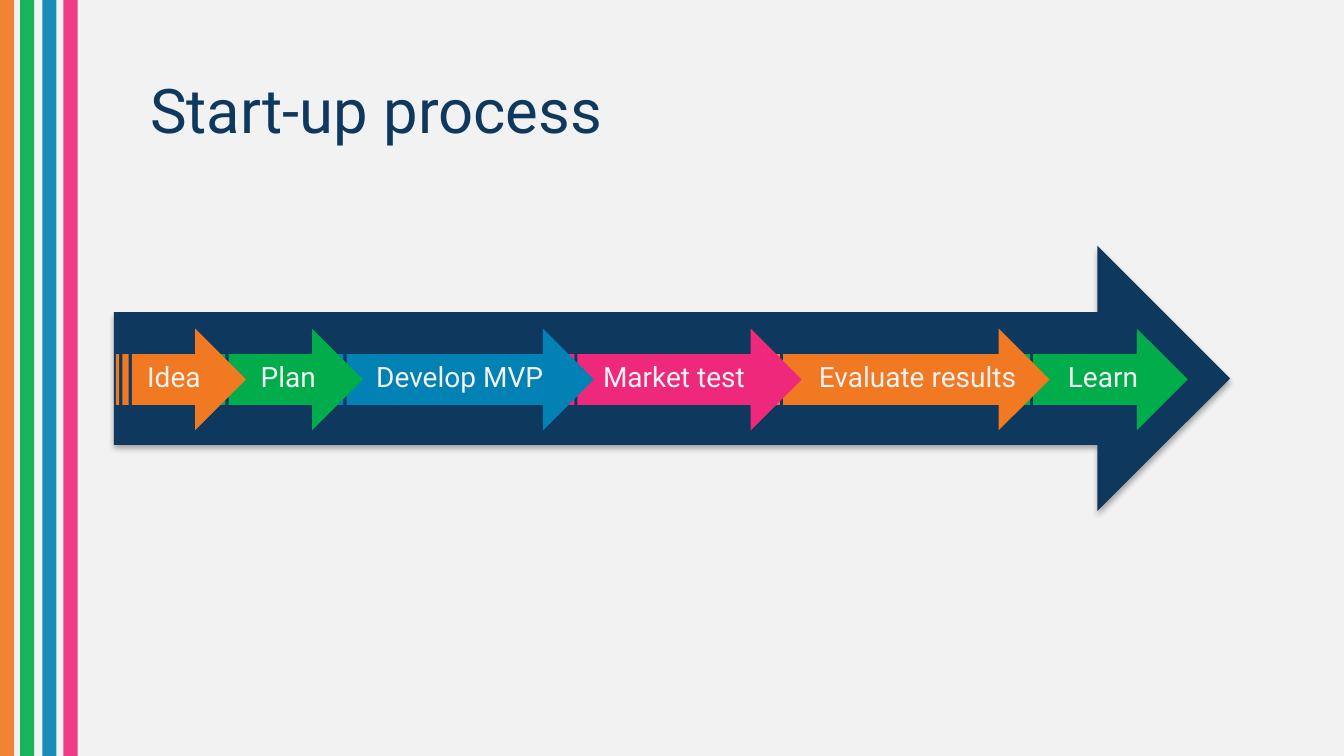
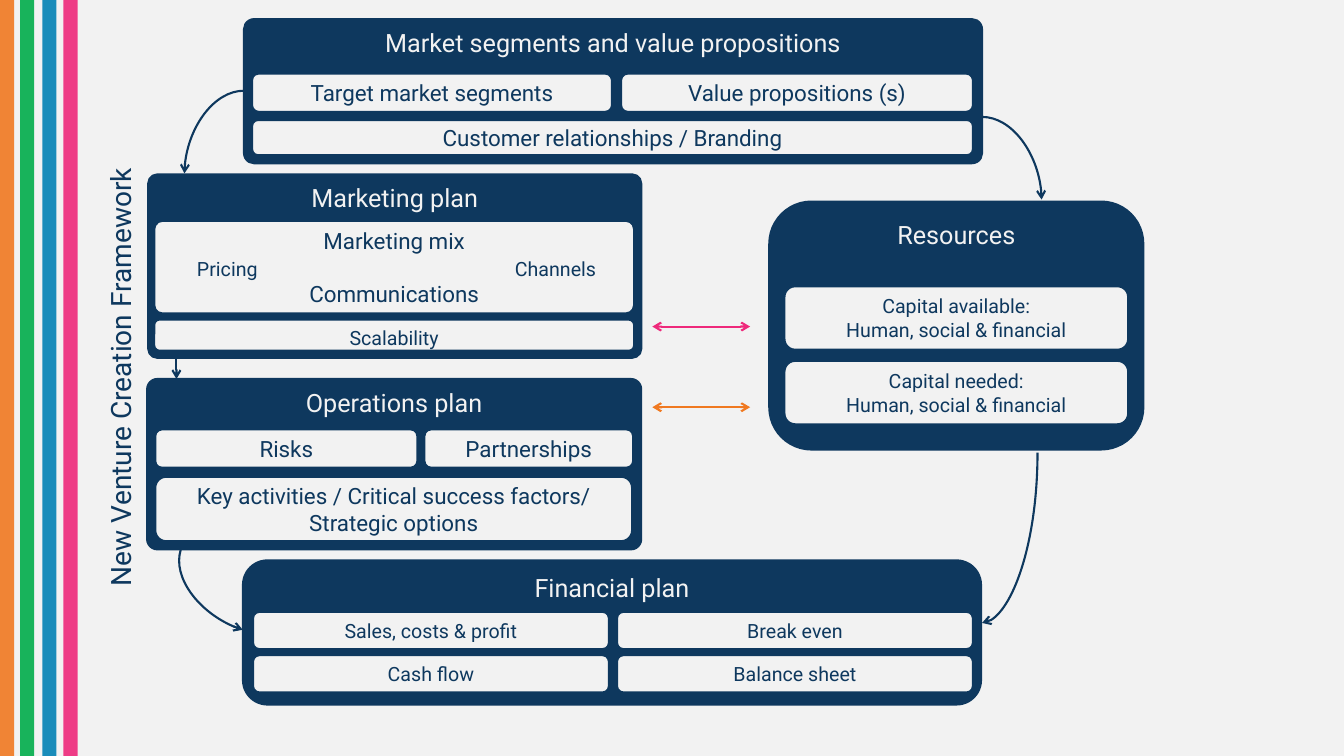
"""Builds two slides on starting a company: the process and the framework."""

import pptx
import pptx.dml.color
import pptx.enum.shapes
import pptx.enum.text
import pptx.oxml
import pptx.oxml.ns
import pptx.util

RGBColor = pptx.dml.color.RGBColor
SHAPE = pptx.enum.shapes.MSO_SHAPE
CONNECTOR = pptx.enum.shapes.MSO_CONNECTOR
ALIGN = pptx.enum.text.PP_ALIGN
ANCHOR = pptx.enum.text.MSO_ANCHOR
qn = pptx.oxml.ns.qn

PX = 9144
SLIDE_WIDTH, SLIDE_HEIGHT = 1333, 750
FONT = "Roboto"
NAVY = RGBColor(0x0E, 0x38, 0x5E)
PALE = RGBColor(0xF2, 0xF2, 0xF2)
ORANGE = RGBColor(0xF0, 0x79, 0x21)
GREEN = RGBColor(0x01, 0xAD, 0x4B)
BLUE = RGBColor(0x02, 0x81, 0xB4)
PINK = RGBColor(0xEE, 0x29, 0x7B)

STAGES = [
    ("Idea", ORANGE, 115, 129, 133, 79),
    ("Plan", GREEN, 211, 149, 234, 104),
    ("Develop MVP", BLUE, 328, 261, 316, 280),
    ("Market test", PINK, 557, 238, 572, 193),
    ("Evaluate results", ORANGE, 761, 280, 794, 232),
    ("Learn", GREEN, 1009, 169, 1042, 104),
]
PANELS = [
    ("Market segments and value propositions", (242, 19, 732, 143), 0.07),
    ("Marketing plan", (147, 173, 489, 182), 0.05),
    ("Operations plan", (146, 376, 490, 169), 0.06),
    ("Resources", (763, 200, 371, 246), 0.17),
    ("Financial plan", (241, 556, 732, 143), 0.17),
]
MAIN_CARDS = [
    ("Target market segments", (250, 73, 357, 38)),
    ("Value propositions (s)", (616, 73, 349, 38)),
    ("Customer relationships / Branding", (250, 119, 715, 35)),
    ("Risks", (154, 426, 260, 38)),
    ("Partnerships", (421, 426, 207, 38)),
    ("Key activities / Critical success factors/ Strategic options", (154, 473, 473, 64)),
]
FINANCE_GRID = [["Sales, costs & profit", "Break even"], ["Cash flow", "Balance sheet"]]
CAPITAL_KINDS = ["available", "needed"]


def append_element(parent, tag, **attributes):
    """Append a drawing element with the given attributes and return it."""
    element = pptx.oxml.parse_xml(f"<{tag} {pptx.oxml.ns.nsdecls('a')}/>")
    for name, value in attributes.items():
        element.set(name, str(value))
    parent.append(element)
    return element


def write(shape, lines, size, color, anchor=ANCHOR.TOP, align=ALIGN.CENTER, gap=0):
    """Fill a shape with paragraphs of one style, with a gap in points between them."""
    frame = shape.text_frame
    frame.word_wrap = True
    frame.vertical_anchor = anchor
    for index, line in enumerate(lines):
        paragraph = frame.add_paragraph() if index else frame.paragraphs[0]
        paragraph.text = line
        paragraph.alignment = align
        if index and gap:
            paragraph.space_before = pptx.util.Pt(gap)
        paragraph.font.name = FONT
        paragraph.font.size = pptx.util.Pt(size)
        paragraph.font.color.rgb = color


def add_text(slide, text, box, size, color, **style):
    """Add a text box holding one paragraph."""
    shape = slide.shapes.add_textbox(*(length * PX for length in box))
    write(shape, [text], size, color, **style)
    return shape


def add_block(slide, kind, box, fill):
    """Add a flat preset shape without an outline."""
    shape = slide.shapes.add_shape(kind, *(length * PX for length in box))
    shape.shadow.inherit = False
    shape.fill.solid()
    shape.fill.fore_color.rgb = fill
    shape.line.fill.background()
    return shape


def add_rounded(slide, box, fill, roundness=0.17):
    """Add a rounded rectangle with the navy outline."""
    shape = add_block(slide, SHAPE.ROUNDED_RECTANGLE, box, fill)
    shape.adjustments[0] = roundness
    shape.line.color.rgb = NAVY
    shape.line.width = pptx.util.Pt(1.5)
    return shape


def add_panel(slide, heading, box, roundness):
    """Add a navy panel with its heading at the top."""
    write(add_rounded(slide, box, NAVY, roundness), [heading], 18, PALE)


def add_card(slide, lines, box, size=16, anchor=ANCHOR.MIDDLE, roundness=0.17, gap=0):
    """Add a pale card with navy text."""
    write(add_rounded(slide, box, PALE, roundness), lines, size, NAVY, anchor, gap=gap)


def add_arrow(slide, begin, end, color=NAVY, ends=("tailEnd",), curved=False, rotation=0):
    """Add a straight arrow, or a quarter curve that leaves its start sideways."""
    kind = CONNECTOR.CURVE if curved else CONNECTOR.STRAIGHT
    connector = slide.shapes.add_connector(kind, *(length * PX for length in begin + end))
    connector.line.color.rgb = color
    connector.line.width = pptx.util.Pt(1.5)
    properties = connector._element.spPr
    if curved:
        properties.find(qn("a:prstGeom")).set("prst", "curvedConnector2")
    if rotation:
        properties.find(qn("a:xfrm")).set("rot", str(rotation * 60000))
    for name in ends:
        append_element(properties.find(qn("a:ln")), f"a:{name}", type="arrow")
    append_element(properties, "a:effectLst")


def add_shadow(shape):
    """Give a shape a soft shadow below it."""
    effects = shape._element.spPr.find(qn("a:effectLst"))
    shadow = append_element(effects, "a:outerShdw", blurRad=44450, dist=27940, dir=5400000)
    color = append_element(shadow, "a:srgbClr", val="000000")
    append_element(color, "a:alpha", val=32000)


def style_master(presentation, slide):
    """Put the background and the coloured stripes on the slide master."""
    master = presentation.slide_master
    master.background.fill.solid()
    master.background.fill.fore_color.rgb = PALE
    for left, color in zip((0, 20, 42, 63), (ORANGE, GREEN, BLUE, PINK)):
        stripe = add_block(slide, SHAPE.RECTANGLE, (left, 0, 14, SLIDE_HEIGHT), color)
        append_element(stripe._element.spPr.find(".//" + qn("a:srgbClr")), "a:alpha", val=90000)
        master.shapes._spTree.append(stripe._element)


def build_process(slide):
    """Show the start-up stages along one large arrow."""
    title = add_text(slide, "Start-up process", (139, 40, 876, 145), 44, NAVY,
                     anchor=ANCHOR.MIDDLE, align=ALIGN.LEFT)
    title.text_frame.paragraphs[0].line_spacing = 0.9
    add_shadow(add_block(slide, SHAPE.RIGHT_ARROW, (113, 244, 1107, 263), NAVY))
    for label, color, left, width, *_ in reversed(STAGES):
        add_block(slide, SHAPE.STRIPED_RIGHT_ARROW, (left, 326, width, 101), color)
    for label, *_, left, width in STAGES:
        add_text(slide, label, (left, 352, width, 44), 20, PALE)


def build_framework(slide):
    """Show the plans of a new venture and how they connect."""
    name = add_text(slide, "New Venture Creation Framework", (99, 144, 40, 460), 20, NAVY,
                    anchor=ANCHOR.MIDDLE)
    name.text_frame._txBody.bodyPr.set("vert", "vert270")
    for heading, box, roundness in PANELS:
        add_panel(slide, heading, box, roundness)
    for text, box in MAIN_CARDS:
        add_card(slide, [text], box)

    add_card(slide, ["Marketing mix", "Communications"], (153, 219, 476, 92),
             roundness=0.09, gap=19)
    add_text(slide, "Pricing", (154, 250, 143, 31), 14, NAVY)
    add_text(slide, "Channels", (473, 250, 156, 31), 14, NAVY)
    add_card(slide, ["Scalability"], (153, 317, 476, 31), 14, ANCHOR.TOP)

    for row, texts in enumerate(FINANCE_GRID):
        for column, text in enumerate(texts):
            box = (251 + 361 * column, 607 + 43 * row, 353, 37)
            add_card(slide, [text], box, 14, ANCHOR.TOP)
    for row, kind in enumerate(CAPITAL_KINDS):
        lines = [f"Capital {kind}:", "Human, social & financial"]
        add_card(slide, lines, (778, 284 + 74 * row, 341, 63), 14, ANCHOR.TOP)

    add_arrow(slide, (175, 355), (175, 376))
    for top, color in ((324, PINK), (404, ORANGE)):
        add_arrow(slide, (744, top), (647, top), color, ("headEnd", "tailEnd"))
    add_arrow(slide, (242, 90), (183, 172), curved=True)
    add_arrow(slide, (974, 116), (1033, 198), curved=True)
    add_arrow(slide, (974, 618), (1029, 449), ends=("headEnd",), curved=True)
    add_arrow(slide, (181, 626), (239, 544), curved=True, rotation=107)


def main():
    """Build and save the presentation."""
    presentation = pptx.Presentation()
    presentation.slide_width = SLIDE_WIDTH * PX
    presentation.slide_height = SLIDE_HEIGHT * PX
    blank = presentation.slide_layouts[6]
    process, framework = (presentation.slides.add_slide(blank) for _ in range(2))
    style_master(presentation, process)
    build_process(process)
    build_framework(framework)
    presentation.save("out.pptx")


if __name__ == "__main__":
    main()
